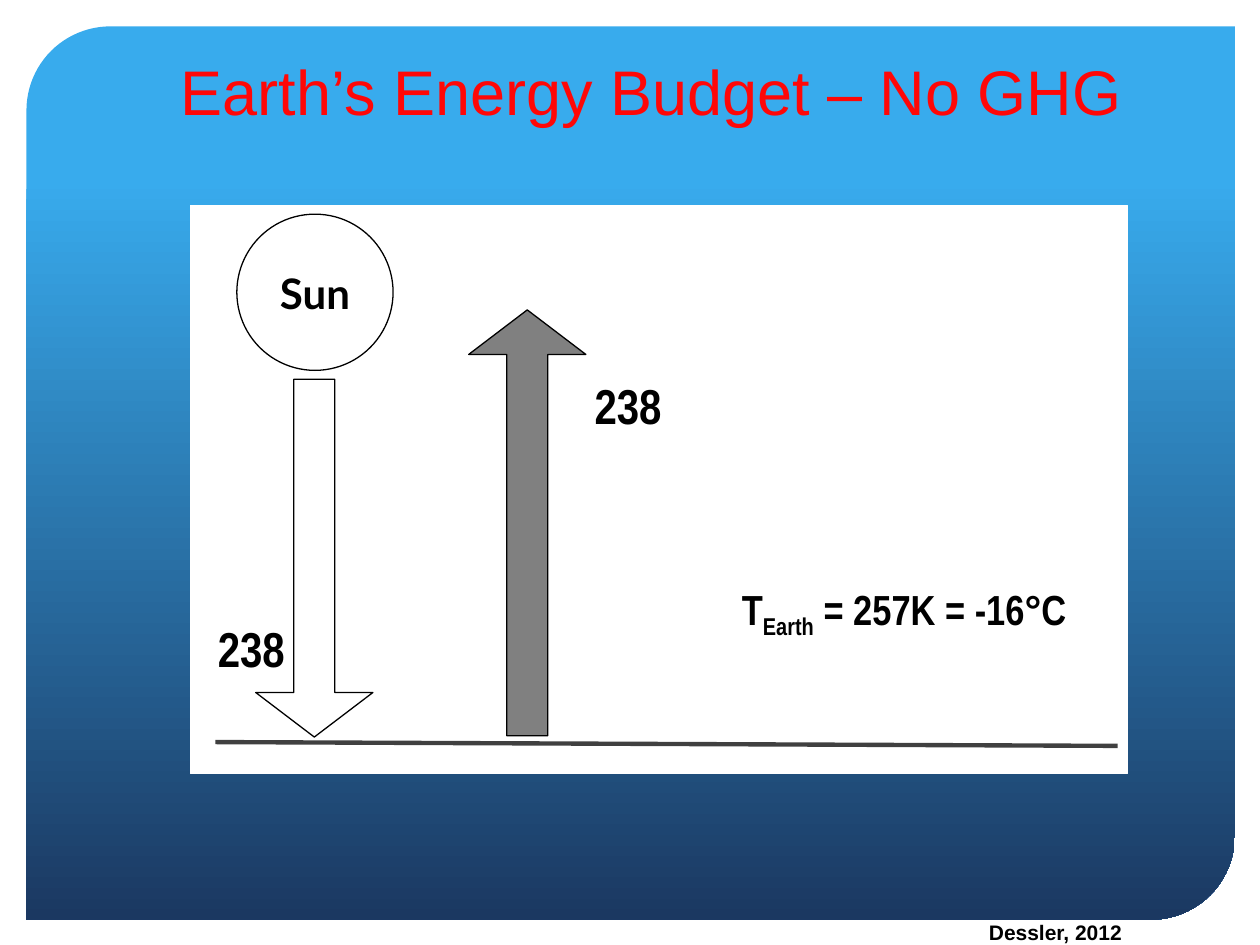
from collections import namedtuple

from lxml import etree
from pptx import Presentation
from pptx.dml.color import RGBColor
from pptx.enum.shapes import MSO_CONNECTOR, MSO_SHAPE
from pptx.enum.text import MSO_ANCHOR, PP_ALIGN
from pptx.oxml.ns import qn
from pptx.util import Inches, Pt

PANEL = MSO_SHAPE.ROUND_2_DIAG_RECTANGLE
RECTANGLE, OVAL, ARROW = MSO_SHAPE.RECTANGLE, MSO_SHAPE.OVAL, MSO_SHAPE.DOWN_ARROW
STRAIGHT = MSO_CONNECTOR.STRAIGHT
LEFT, CENTER = PP_ALIGN.LEFT, PP_ALIGN.CENTER
TOP, MIDDLE = MSO_ANCHOR.TOP, MSO_ANCHOR.MIDDLE

COLORS = {
    "sky": "38ABED", "deep": "1B3861", "title": "FF0707", "white": "FFFFFF",
    "black": "000000", "gray": "808080", "ground": "404040",
}

Box = namedtuple("Box", "left top width height")


def color(name):
    return RGBColor.from_string(COLORS[name])


def part(box, left, top, width, height):
    """Area inside a box, given in percent of its width and height."""
    return Box(round(box.left + box.width * left / 100),
               round(box.top + box.height * top / 100),
               round(box.width * width / 100),
               round(box.height * height / 100))


def add_figure(page, kind, box, fill, line):
    shape = page.shapes.add_shape(kind, *box)
    shape.shadow.inherit = False
    shape.fill.solid()
    shape.fill.fore_color.rgb = color(fill)
    shape.line.color.rgb = color(line)
    shape.line.width = Pt(0.75)
    return shape


def write(shape, pieces, size, font, ink="black", bold=True, align=CENTER, anchor=TOP):
    """Fill a shape with one paragraph; pieces are (text, baseline percent)."""
    frame = shape.text_frame
    frame.word_wrap = True
    frame.vertical_anchor = anchor
    para = frame.paragraphs[0]
    para.alignment = align
    para.font.size, para.font.name, para.font.bold = Pt(size), font, bold
    para.font.color.rgb = color(ink)
    for text, baseline in pieces:
        span = para.add_run()
        span.text = text
        if baseline:
            span._r.get_or_add_rPr().set("baseline", str(baseline * 1000))


def add_label(page, box, text, size, font, **style):
    pieces = [(text, 0)] if isinstance(text, str) else text
    write(page.shapes.add_textbox(*box), pieces, size, font, **style)


def draw_background(page, box):
    panel = add_figure(page, PANEL, box, "sky", "sky")
    panel.adjustments[0], panel.adjustments[1] = 0.094, 0
    panel.line.fill.background()
    panel.fill.gradient()
    panel.fill.gradient_angle = 270
    stops = ((0.17, "sky"), (1, "deep"))
    for stop, (position, name) in zip(panel.fill.gradient_stops, stops):
        stop.position = position
        stop.color.rgb = color(name)


def draw_arrow(page, box, fill, rotation=0):
    arrow = add_figure(page, ARROW, box, fill, "black")
    arrow.adjustments[0], arrow.adjustments[1] = 0.351, 0.38
    arrow.rotation = rotation


def draw_ground(page, box):
    ground = page.shapes.add_connector(
        STRAIGHT, box.left, box.top, box.left + box.width, box.top + box.height)
    ground.line.color.rgb = color("ground")
    ground.line.width = Pt(2.5)
    etree.SubElement(ground._element.spPr, qn("a:effectLst"))


def draw_budget(page, box):
    add_figure(page, RECTANGLE, box, "white", "white")

    # Sun and incoming energy
    sun = add_figure(page, OVAL, part(box, 4.97, 1.55, 16.67, 27.49), "white", "black")
    write(sun, [("Sun", 0)], 24, "Lato", anchor=MIDDLE)
    draw_arrow(page, part(box, 6.99, 30.6, 12.5, 62.97), "white")
    draw_ground(page, part(box, 2.69, 94.46, 96.23, 0.67))

    # Outgoing energy
    draw_arrow(page, part(box, 29.7, 18.4, 12.5, 74.94), "gray", rotation=180)

    # Energy flows and resulting temperature
    for left, top in ((0.81, 71.62), (40.99, 28.82)):
        add_label(page, part(box, left, top, 11.42, 12.64), "238", 28, "Arial Narrow")
    temperature = [("T", 0), ("Earth", -25), (" = 257K = -16°C", 0)]
    add_label(page, part(box, 57.53, 65.41, 38.44, 11.09), temperature, 24,
              "Arial Narrow", align=LEFT)


def main():
    deck = Presentation()
    deck.slide_width, deck.slide_height = Inches(10), Inches(7.5)
    page = deck.slides.add_slide(deck.slide_layouts[6])
    whole = Box(0, 0, deck.slide_width, deck.slide_height)

    draw_background(page, part(whole, 2.1, 2.8, 95.9, 94.53))
    draw_budget(page, part(whole, 15.1, 21.73, 74.4, 60.13))
    add_label(page, part(whole, 4.5, 4.8, 94.4, 9.47), "Earth’s Energy Budget – No GHG",
              36, "Arial", ink="title", bold=False, anchor=MIDDLE)
    add_label(page, part(whole, 77.5, 96.67, 17.5, 4), "Dessler, 2012", 12, "Arial",
              align=LEFT)
    deck.save("out.pptx")


if __name__ == "__main__":
    main()
